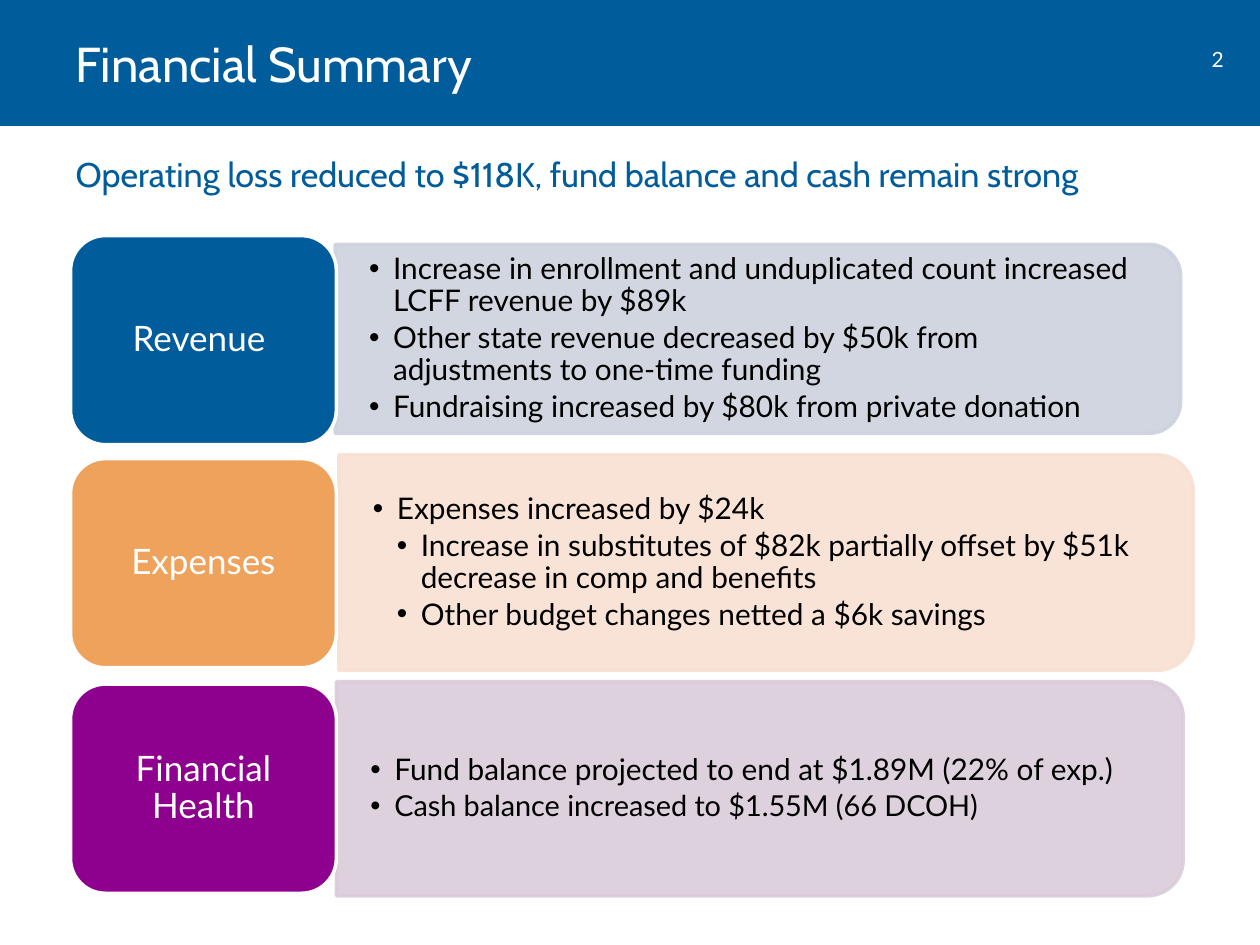
from lxml.etree import SubElement
from pptx import Presentation
from pptx.dml.color import RGBColor
from pptx.enum.shapes import MSO_SHAPE
from pptx.enum.text import MSO_ANCHOR, MSO_AUTO_SIZE, PP_ALIGN
from pptx.oxml.ns import qn
from pptx.util import Inches, Pt

BLUE, WHITE, BLACK = "005C9A", "FFFFFF", "000000"
LABEL_LEFT, LABEL_WIDTH, LABEL_HEIGHT = 0.56, 2.11, 1.66
BULLET_INDENT = 0.19
BAR_INSET = 0.08

ROWS = [
    {
        "label": "Revenue ", "label_top": 1.87, "colour": BLUE,
        "bar": (2.66, 1.94, 6.71, 1.5), "tint": "CCD2DE",
        "bullets": [
            (1, 17, "Increase in enrollment and unduplicated count increased LCFF revenue by $89k"),
            (1, 17, "Other state revenue decreased by $50k from adjustments to one-time funding"),
            (1, 17, "Fundraising increased by $80k from private donation"),
        ],
    },
    {
        "label": "Expenses", "label_top": 3.64, "colour": "EEA25C",
        "bar": (2.69, 3.61, 6.78, 1.71), "tint": "F8E0D2",
        "bullets": [
            (1, 17, "Expenses increased by $24k"),
            (2, 17, "Increase in substitutes of $82k partially offset by $51k decrease in comp and benefits"),
            (2, 17, "Other budget changes netted a $6k savings"),
        ],
    },
    {
        "label": "Financial Health", "label_top": 5.43, "colour": "8E008E",
        "bar": (2.67, 5.41, 6.72, 1.7), "tint": "DBCCDB",
        "bullets": [
            (1, 17, "Fund balance projected to end at $1.89M (22% of exp.)"),
            (1, 16.5, "Cash balance increased to $1.55M (66 DCOH)"),
        ],
    },
]


def rgb(colour):
    return RGBColor.from_string(colour)


def set_font(paragraph, name, size, colour):
    paragraph.font.name = name
    paragraph.font.size = Pt(size)
    paragraph.font.color.rgb = rgb(colour)


def set_margins(frame, horizontal, vertical):
    frame.margin_left = frame.margin_right = Inches(horizontal)
    frame.margin_top = frame.margin_bottom = Inches(vertical)


def set_bullet(paragraph, level, mark):
    properties = paragraph._p.get_or_add_pPr()
    properties.set("marL", str(Inches(BULLET_INDENT * level)))
    properties.set("indent", str(-Inches(BULLET_INDENT) if mark else 0))
    if mark:
        SubElement(properties, qn("a:buFont")).set("typeface", "Arial")
        SubElement(properties, qn("a:buChar")).set("char", mark)
    else:
        SubElement(properties, qn("a:buNone"))


def add_block(page, kind, area, colour, line_colour=None):
    block = page.shapes.add_shape(kind, *map(Inches, area))
    block.shadow.inherit = False
    block.fill.solid()
    block.fill.fore_color.rgb = rgb(colour)
    if line_colour:
        block.line.color.rgb = rgb(line_colour)
        block.line.width = Pt(2)
    else:
        block.line.fill.background()
    return block


def fill_placeholder(box, area, text, size, colour, anchor):
    box.left, box.top, box.width, box.height = map(Inches, area)
    frame = box.text_frame
    frame.text = text
    frame.word_wrap = True
    frame.auto_size = MSO_AUTO_SIZE.NONE
    frame.vertical_anchor = anchor
    para = frame.paragraphs[0]
    set_bullet(para, 0, None)
    para.alignment = PP_ALIGN.LEFT
    para.space_before = Pt(0)
    set_font(para, "Cabin", size, colour)


def add_header(page):
    banner = add_block(page, MSO_SHAPE.RECTANGLE, (0, 0, 10, 1), BLUE)
    page.shapes._spTree.insert(2, banner._element)
    fill_placeholder(page.shapes.title, (0.5, 0, 8.91, 1), "Financial Summary",
                     28, WHITE, MSO_ANCHOR.MIDDLE)
    fill_placeholder(page.placeholders[1], (0.5, 1.17, 9, 0.52),
                     "Operating loss reduced to $118K, fund balance and cash remain strong",
                     19.5, BLUE, MSO_ANCHOR.TOP)


def add_page_number(page, number):
    box = page.shapes.add_textbox(Inches(9.44), Inches(0.32), Inches(0.45), Inches(0.3))
    box.text_frame.word_wrap = True
    para = box.text_frame.paragraphs[0]
    para.text = number
    para.alignment = PP_ALIGN.CENTER
    set_font(para, "Lato", 12, WHITE)


def add_bar(page, area, tint):
    left, top, width, height = area
    shift = (width - height) / 2
    bar = add_block(page, MSO_SHAPE.ROUND_2_SAME_RECTANGLE,
                    (left + shift, top - shift, height, width), tint, tint)
    bar.rotation = 90
    for colour in bar._element.spPr.iter(qn("a:srgbClr")):
        SubElement(colour, qn("a:alpha")).set("val", "90000")


def add_bullets(page, area, bullets):
    left, top, width, height = area
    box = page.shapes.add_textbox(Inches(left), Inches(top + BAR_INSET),
                                  Inches(width - BAR_INSET), Inches(height - 2 * BAR_INSET))
    frame = box.text_frame
    frame.word_wrap = True
    frame.vertical_anchor = MSO_ANCHOR.MIDDLE
    set_margins(frame, 0.27, 0.14)
    for index, (level, size, text) in enumerate(bullets):
        para = frame.add_paragraph() if index else frame.paragraphs[0]
        para.text = text
        set_bullet(para, level, "•")
        para.level = level
        para.line_spacing = 0.9
        para.space_after = Pt(2.6)
        set_font(para, "Lato", size, BLACK)


def add_label(page, top, text, colour):
    label = add_block(page, MSO_SHAPE.ROUNDED_RECTANGLE,
                      (LABEL_LEFT, top, LABEL_WIDTH, LABEL_HEIGHT), colour, WHITE)
    frame = label.text_frame
    frame.word_wrap = True
    frame.vertical_anchor = MSO_ANCHOR.MIDDLE
    set_margins(frame, 0.08, 0.04)
    para = frame.paragraphs[0]
    para.text = text
    para.alignment = PP_ALIGN.CENTER
    para.line_spacing = 0.9
    set_font(para, "Lato", 20, WHITE)


def main():
    deck = Presentation()
    deck.slide_width, deck.slide_height = Inches(10), Inches(7.5)
    page = deck.slides.add_slide(deck.slide_layouts[1])
    add_header(page)
    add_page_number(page, "2")
    for row in ROWS:
        add_bar(page, row["bar"], row["tint"])
        add_bullets(page, row["bar"], row["bullets"])
        add_label(page, row["label_top"], row["label"], row["colour"])
    deck.save("out.pptx")


if __name__ == "__main__":
    main()
